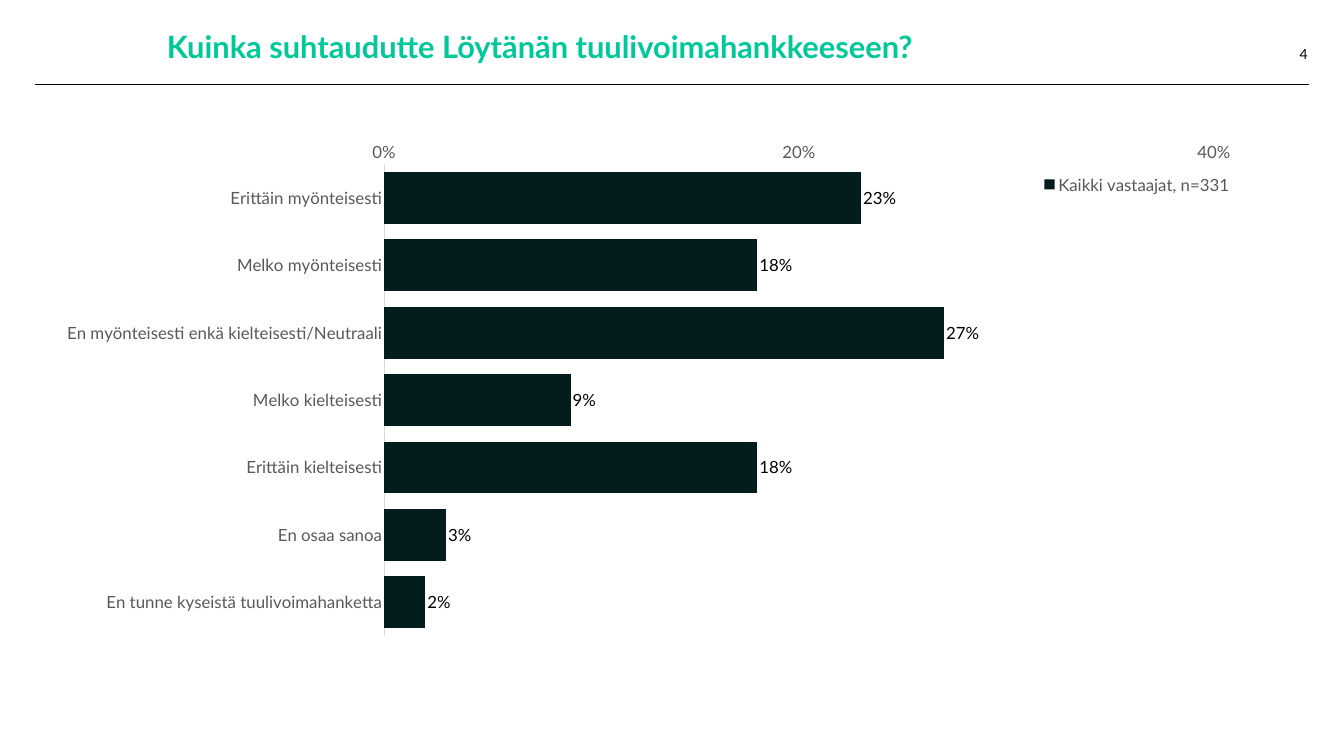
from lxml import etree
from pptx import Presentation
from pptx.chart.data import CategoryChartData
from pptx.dml.color import RGBColor
from pptx.enum.chart import XL_CHART_TYPE, XL_LABEL_POSITION, XL_LEGEND_POSITION, XL_TICK_MARK
from pptx.enum.shapes import MSO_CONNECTOR
from pptx.enum.text import MSO_ANCHOR, MSO_AUTO_SIZE, PP_ALIGN
from pptx.oxml.ns import qn
from pptx.util import Inches, Pt

BAR = XL_CHART_TYPE.BAR_CLUSTERED
OUTSIDE_END = XL_LABEL_POSITION.OUTSIDE_END
LEGEND_RIGHT = XL_LEGEND_POSITION.RIGHT
NO_TICK = XL_TICK_MARK.NONE
STRAIGHT = MSO_CONNECTOR.STRAIGHT
TOP, BOTTOM = MSO_ANCHOR.TOP, MSO_ANCHOR.BOTTOM
LEFT, RIGHT = PP_ALIGN.LEFT, PP_ALIGN.RIGHT

FONT = "Lato"
COLORS = {
    "title": "00C999",
    "text": "000000",
    "axis_text": "595959",
    "axis_line": "D9D9D9",
    "bar": "031C1C",
}
SERIES = "Kaikki vastaajat, n=331"
ANSWERS = [
    ("Erittäin myönteisesti", 0.23),
    ("Melko myönteisesti", 0.18),
    ("En myönteisesti enkä kielteisesti/Neutraali", 0.27),
    ("Melko kielteisesti", 0.09),
    ("Erittäin kielteisesti", 0.18),
    ("En osaa sanoa", 0.03),
    ("En tunne kyseistä tuulivoimahanketta", 0.02),
]


def rgb(name):
    return RGBColor.from_string(COLORS[name])


def style_font(font, size, color, bold=False):
    font.name = FONT
    font.size = Pt(size)
    font.bold = bold
    font.color.rgb = rgb(color)


def place(sp, left, top, width, height):
    sp.left, sp.top = Inches(left), Inches(top)
    sp.width, sp.height = Inches(width), Inches(height)


def write_text(sp, text, size, color, align, anchor, margins, bold=False):
    tf = sp.text_frame
    tf.word_wrap = True
    tf.auto_size = MSO_AUTO_SIZE.NONE
    tf.vertical_anchor = anchor
    tf.margin_left, tf.margin_top, tf.margin_right, tf.margin_bottom = map(Inches, margins)
    p = tf.paragraphs[0]
    p.alignment = align
    r = p.add_run()
    r.text = text
    style_font(r.font, size, color, bold)
    return p


def add_title(s, text):
    sp = s.shapes.title
    place(sp, 3.31, 0.73, 22.63, 0.83)
    p = write_text(sp, text, 44, "title", LEFT, TOP, (0, 0, 0, 0), bold=True)
    p.line_spacing = Pt(40)


def add_page_number(s, number):
    sp = s.shapes.add_textbox(Inches(24.56), Inches(0.78), Inches(1.38), Inches(0.51))
    write_text(sp, number, 20, "text", RIGHT, BOTTOM, (0.1, 0.05, 0, 0.05))


def add_rule(s):
    line = s.shapes.add_connector(STRAIGHT, Inches(0.69), Inches(1.68), Inches(25.97), Inches(1.68))
    line.line.color.rgb = rgb("text")
    line.line.width = Pt(0.6)
    etree.SubElement(line._element.spPr, qn("a:effectLst"))


def set_layout(parent, index, x, y, w, h, inner=False):
    for old in parent.findall(qn("c:layout")):
        parent.remove(old)
    layout = etree.Element(qn("c:layout"))
    manual = etree.SubElement(layout, qn("c:manualLayout"))
    values = [("layoutTarget", "inner")] if inner else []
    values += [("xMode", "edge"), ("yMode", "edge"), ("x", x), ("y", y), ("w", w), ("h", h)]
    for tag, value in values:
        etree.SubElement(manual, qn(f"c:{tag}")).set("val", str(value))
    parent.insert(index, layout)


def style_axis(axis):
    axis.major_tick_mark = NO_TICK
    axis.minor_tick_mark = NO_TICK
    axis.has_major_gridlines = False
    style_font(axis.tick_labels.font, 24, "axis_text")


def format_axes(chart):
    cat, val = chart.category_axis, chart.value_axis
    style_axis(cat)
    cat.reverse_order = True
    cat.format.line.color.rgb = rgb("axis_line")
    cat.format.line.width = Pt(0.75)
    style_axis(val)
    val.minimum_scale, val.maximum_scale, val.major_unit = 0, 0.4, 0.2
    val.tick_labels.number_format = "0%"
    val.tick_labels.number_format_is_linked = False
    val.format.line.fill.background()


def format_bars(plot):
    plot.gap_width = 30
    plot.vary_by_categories = False
    series = plot.series[0]
    series.format.fill.solid()
    series.format.fill.fore_color.rgb = rgb("bar")
    series.invert_if_negative = False
    labels = series.data_labels
    labels.show_value = True
    labels.position = OUTSIDE_END
    labels.number_format = "0%"
    labels.number_format_is_linked = False
    style_font(labels.font, 24, "text")


def format_legend(chart):
    chart.has_legend = True
    legend = chart.legend
    legend.position = LEGEND_RIGHT
    legend.include_in_layout = False
    style_font(legend.font, 24, "axis_text")
    set_layout(legend._element, 1, 0.83, 0.06, 0.17, 0.05)


def add_answer_chart(s):
    data = CategoryChartData(number_format="0%")
    data.categories = [answer for answer, _ in ANSWERS]
    data.add_series(SERIES, [share for _, share in ANSWERS])
    chart = s.shapes.add_chart(
        BAR, Inches(1.03), Inches(2.69), Inches(23.52), Inches(11.41), data
    ).chart
    chart.has_title = False
    style_font(chart.font, 24, "text")
    format_axes(chart)
    format_bars(chart.plots[0])
    format_legend(chart)
    plot_area = chart._chartSpace.chart.plotArea
    set_layout(plot_area, 0, 0.28, 0.05, 0.7, 0.82, inner=True)


def main():
    prs = Presentation()
    prs.slide_width, prs.slide_height = Inches(26.66), Inches(15)
    s = prs.slides.add_slide(prs.slide_layouts[5])
    add_rule(s)
    add_title(s, "Kuinka suhtaudutte Löytänän tuulivoimahankkeeseen?")
    add_page_number(s, "4")
    add_answer_chart(s)
    prs.save("out.pptx")


if __name__ == "__main__":
    main()
